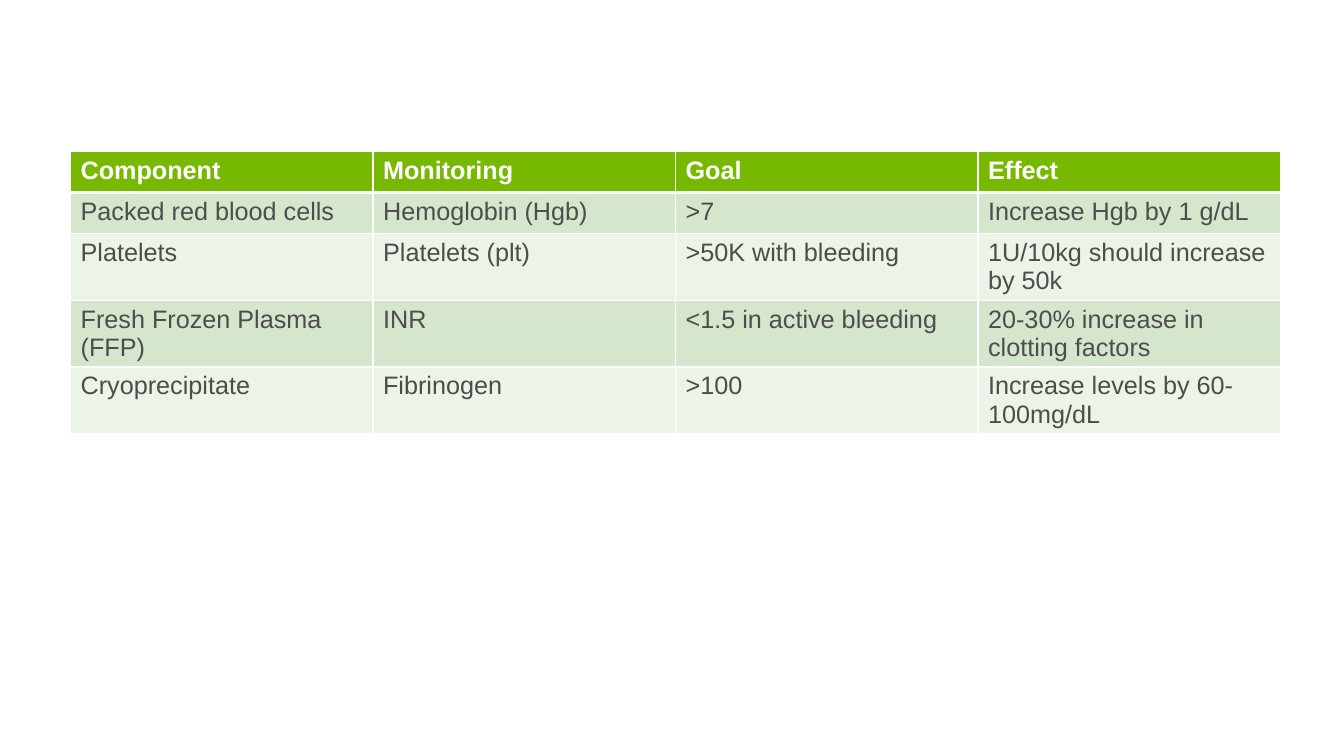
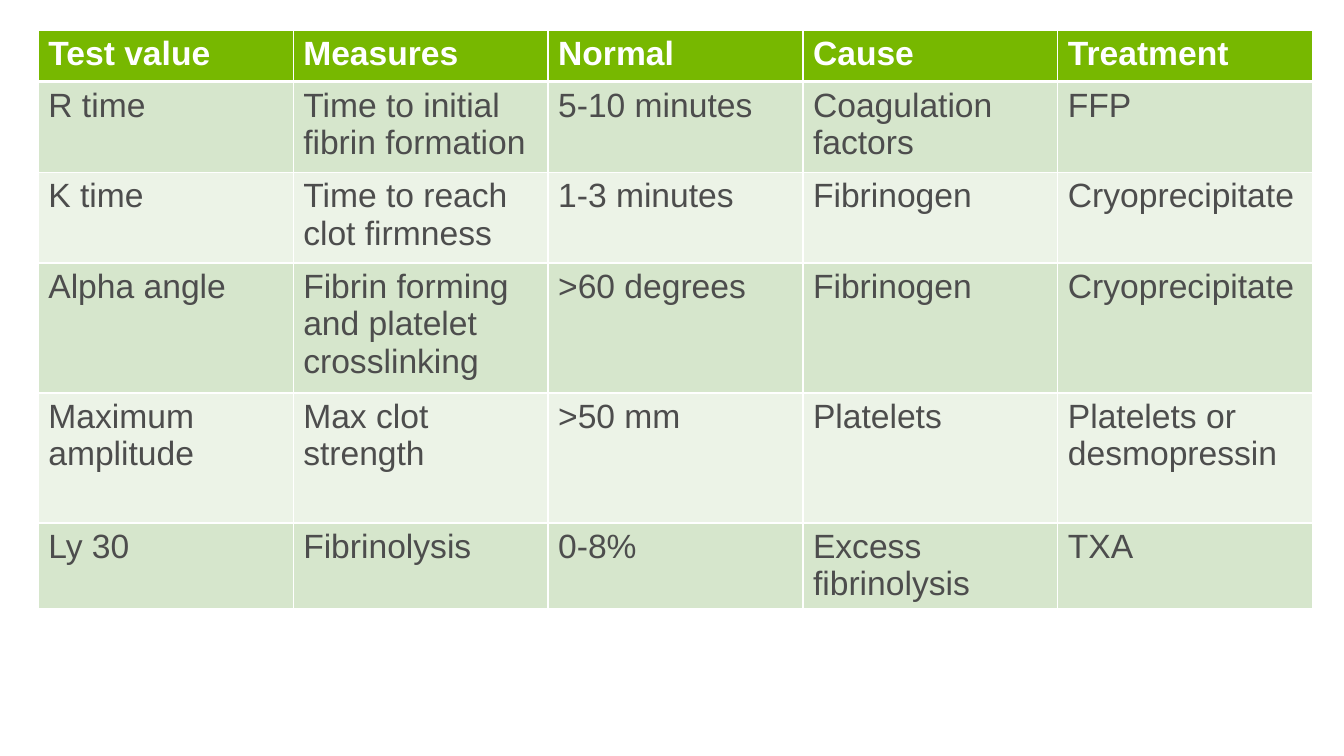
"""Build two slides of tables on blood components and clotting test values."""
from lxml import etree
from pptx import Presentation
from pptx.dml.color import RGBColor
from pptx.oxml import ns
from pptx.util import Inches, Pt

FONT = "Arial"
GREEN = RGBColor(0x77, 0xB8, 0x00)
BAND_DARK = RGBColor(0xD6, 0xE6, 0xCC)
BAND_LIGHT = RGBColor(0xEC, 0xF3, 0xE7)
WHITE = RGBColor(0xFF, 0xFF, 0xFF)
GREY = RGBColor(0x4D, 0x4D, 0x4D)


def add_border(cell, side, width):
    tcPr = cell._tc.get_or_add_tcPr()
    ln = etree.SubElement(tcPr, ns.qn(f"a:ln{side}"), w=str(Pt(width)))
    fill = etree.SubElement(ln, ns.qn("a:solidFill"))
    etree.SubElement(fill, ns.qn("a:srgbClr"), val=str(WHITE))


def add_banded_table(slide, left, top, width, heights, size, rows):
    n_cols = len(rows[0])
    frame = slide.shapes.add_table(len(rows), n_cols, Inches(left), Inches(top),
                                   Inches(width), Inches(sum(heights)))
    table = frame.table
    for col in table.columns:
        col.width = Inches(width / n_cols)
    for i, (height, values) in enumerate(zip(heights, rows)):
        header = i == 0
        table.rows[i].height = Inches(height)
        for j, value in enumerate(values):
            cell = table.cell(i, j)
            for side in "LRTB":
                thick = (header and side == "B") or (i == 1 and side == "T")
                add_border(cell, side, 3 if thick else 1)
            cell.fill.solid()
            cell.fill.fore_color.rgb = GREEN if header else BAND_DARK if i % 2 else BAND_LIGHT
            cell.text_frame.text = value
            font = cell.text_frame.paragraphs[0].runs[0].font
            font.name = FONT
            font.size = Pt(size)
            font.bold = header
            font.color.rgb = WHITE if header else GREY


prs = Presentation()
prs.slide_width = Inches(13.33)
prs.slide_height = Inches(7.5)
blank = prs.slide_layouts[6]

components = [
    ["Component", "Monitoring", "Goal", "Effect"],
    ["Packed red blood cells", "Hemoglobin (Hgb)", ">7", "Increase Hgb by 1 g/dL"],
    ["Platelets", "Platelets (plt)", ">50K with bleeding", "1U/10kg should increase by 50k"],
    ["Fresh Frozen Plasma (FFP)", "INR", "<1.5 in active bleeding",
     "20-30% increase in clotting factors"],
    ["Cryoprecipitate", "Fibrinogen", ">100", "Increase levels by 60-100mg/dL"],
]
s = prs.slides.add_slide(blank)
add_banded_table(s, 0.7, 1.5, 12, [0.41] * 5, 18, components)

test_values = [
    ["Test value", "Measures", "Normal", "Cause", "Treatment"],
    ["R time", "Time to initial fibrin formation", "5-10 minutes", "Coagulation factors", "FFP"],
    ["K time", "Time to reach clot firmness", "1-3 minutes", "Fibrinogen", "Cryoprecipitate"],
    ["Alpha angle", "Fibrin forming and platelet crosslinking", ">60 degrees", "Fibrinogen",
     "Cryoprecipitate"],
    ["Maximum amplitude", "Max clot strength", ">50 mm", "Platelets",
     "Platelets or desmopressin"],
    ["Ly 30", "Fibrinolysis", "0-8%", "Excess fibrinolysis", "TXA"],
]
s = prs.slides.add_slide(blank)
add_banded_table(s, 0.38, 0.3, 12.64, [0.51, 0.9, 0.9, 1.29, 1.29, 0.51], 24, test_values)

prs.save("out.pptx")
